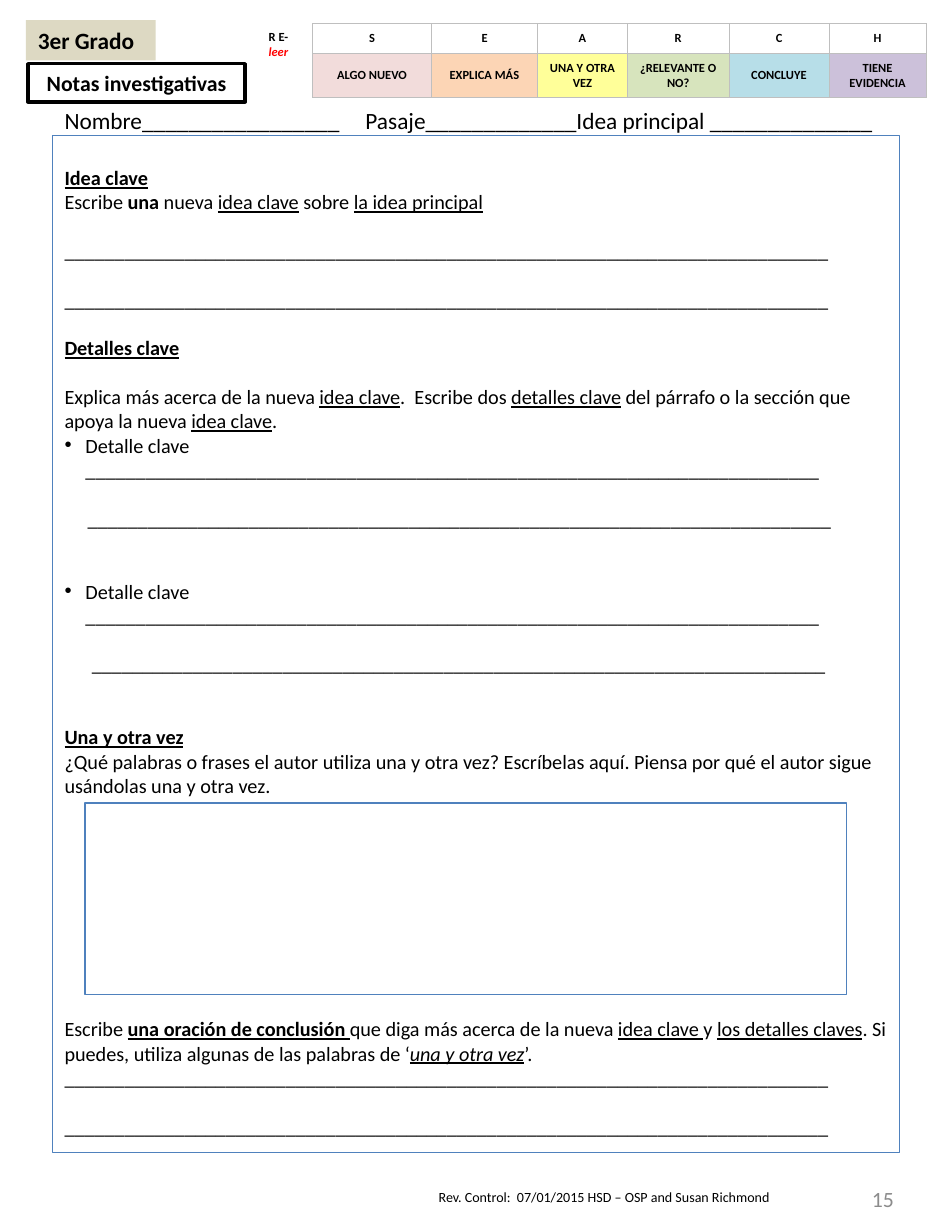
"""Build the third-grade investigative notes worksheet."""
from lxml.etree import SubElement
from pptx import Presentation
from pptx.dml.color import RGBColor
from pptx.enum.shapes import MSO_SHAPE
from pptx.enum.text import MSO_ANCHOR, PP_ALIGN
from pptx.oxml.ns import qn
from pptx.util import Pt

BLACK = RGBColor(0x00, 0x00, 0x00)
WHITE = RGBColor(0xFF, 0xFF, 0xFF)
RED = RGBColor(0xFF, 0x00, 0x00)
GRAY = RGBColor(0x8C, 0x8C, 0x8C)
BLUE = RGBColor(0x4F, 0x81, 0xBD)
TAN = RGBColor(0xDD, 0xD9, 0xC3)
PINK = RGBColor(0xF2, 0xDC, 0xDB)
ORANGE = RGBColor(0xFC, 0xD5, 0xB5)
YELLOW = RGBColor(0xFF, 0xFF, 0x99)
GREEN = RGBColor(0xD7, 0xE4, 0xBD)
AQUA = RGBColor(0xB7, 0xDE, 0xE8)
PURPLE = RGBColor(0xCC, 0xC1, 0xDA)
BORDER = RGBColor(0xBF, 0xBF, 0xBF)

STYLES = {"b": "bold", "i": "italic", "u": "underline"}
MARGINS = {"margin_left": Pt(7.7), "margin_right": Pt(7.7),
           "margin_top": Pt(3.6), "margin_bottom": Pt(3.6)}
LINE_HEIGHT = 15.65
INDENT = 13.5


def write_runs(paragraph, runs, size, color=BLACK, align=PP_ALIGN.LEFT):
    paragraph.alignment = align
    for text, styles in runs:
        run = paragraph.add_run()
        run.text = text
        font_format = {"name": "Calibri", "size": Pt(size)}
        font_format.update({STYLES[style]: True for style in styles})
        for name, value in font_format.items():
            setattr(run.font, name, value)
        run.font.color.rgb = color


def add_box(slide, position, fill=None, line=None, width=0.75, anchor=MSO_ANCHOR.TOP):
    shape = slide.shapes.add_shape(MSO_SHAPE.RECTANGLE, *map(Pt, position))
    shape.shadow.inherit = False
    if fill is None:
        shape.fill.background()
    else:
        shape.fill.solid()
        shape.fill.fore_color.rgb = fill
    if line is None:
        shape.line.fill.background()
    else:
        shape.line.color.rgb = line
        shape.line.width = Pt(width)
    frame_format = {**MARGINS, "word_wrap": True, "vertical_anchor": anchor}
    for name, value in frame_format.items():
        setattr(shape.text_frame, name, value)
    return shape


presentation = Presentation()
presentation.slide_width = Pt(612)
presentation.slide_height = Pt(792)
slide = presentation.slides.add_slide(presentation.slide_layouts[6])

footer = add_box(slide, (274.3, 760.3, 306, 18.7))
write_runs(footer.text_frame.paragraphs[0],
           [("Rev. Control:  07/01/2015 HSD – OSP and Susan Richmond", "")], 9)

long_rule = [("_" * 76, "")]
detail = [("Detalle clave " + "_" * 73, "")]
body = [
    (0, 0, [("Idea clave", "bu")]),
    (0, 0, [("Escribe ", ""), ("una", "b"), (" nueva ", ""), ("idea clave", "u"),
            (" sobre ", ""), ("la idea principal", "u")]),
    (1, 0, long_rule),
    (1, 0, long_rule),
    (1, 0, [("Detalles clave", "bu")]),
    (1, 0, [("Explica más acerca de la nueva ", ""), ("idea clave", "u"),
            (".  Escribe dos ", ""), ("detalles clave", "u"),
            (" del párrafo o la sección que apoya la nueva ", ""),
            ("idea clave", "u"), (".", "")]),
    (0, INDENT, detail),
    (1, 14.8, [("_" * 74, "")]),
    (2, INDENT, detail),
    (1, 17.6, [("_" * 73, "")]),
    (2, 0, [("Una y otra vez", "bu")]),
    (0, 0, [("¿Qué palabras o frases el autor utiliza una y otra vez? Escríbelas aquí. "
             "Piensa por qué el autor sigue usándolas una y otra vez.", "")]),
    (9, 0, [("Escribe ", ""), ("una oración de conclusión ", "bu"),
            ("que diga más acerca de la nueva ", ""), ("idea clave ", "u"), ("y ", ""),
            ("los detalles claves", "u"),
            (". Si puedes, utiliza algunas de las palabras de ‘", ""),
            ("una y otra vez", "iu"), ("’.", "")]),
    (0, 0, long_rule),
    (1, 0, long_rule),
]
notes = add_box(slide, (33.8, 87.1, 544.3, 653.8), WHITE, BLUE)
notes.text_frame.margin_top = Pt(3.6 + LINE_HEIGHT)
for index, (gap_lines, left_indent, runs) in enumerate(body):
    paragraph = notes.text_frame.add_paragraph() if index else notes.text_frame.paragraphs[0]
    paragraph.space_before = Pt(gap_lines * LINE_HEIGHT)
    write_runs(paragraph, runs, 13)
    properties = paragraph._p.get_or_add_pPr()
    properties.set("marL", str(Pt(left_indent)))
    if runs is detail:
        properties.set("indent", str(-Pt(left_indent)))
        SubElement(properties, qn("a:buFont"), typeface="Arial")
        SubElement(properties, qn("a:buChar"), char="•")

page_number = add_box(slide, (516.2, 749.5, 66.2, 42.5), anchor=MSO_ANCHOR.MIDDLE)
write_runs(page_number.text_frame.paragraphs[0], [("15", "")], 14, GRAY, PP_ALIGN.RIGHT)

grade = add_box(slide, (16.6, 13, 83.5, 25.9), TAN)
write_runs(grade.text_frame.paragraphs[0], [("3er Grado", "b")], 15)

add_box(slide, (54.7, 516.2, 489.6, 123.1), line=BLUE)

heading = add_box(slide, (33.8, 64.8, 544.3, 25.9))
paragraph = heading.text_frame.paragraphs[0]
write_runs(paragraph, [("Nombre" + "_" * 17 + "\tPasaje" + "_" * 13
                        + "Idea principal " + "_" * 14, "")], 15)
tab_list = SubElement(paragraph._p.get_or_add_pPr(), qn("a:tabLst"))
SubElement(tab_list, qn("a:tab"), pos=str(Pt(193.5)), algn="l")

search_columns = [
    ("S", "ALGO NUEVO", PINK, 76.3),
    ("E", "EXPLICA MÁS", ORANGE, 68.4),
    ("A", "UNA Y OTRA VEZ", YELLOW, 57.6),
    ("R", "¿RELEVANTE O NO?", GREEN, 65.5),
    ("C", "CONCLUYE", AQUA, 64.1),
    ("H", "TIENE EVIDENCIA", PURPLE, 62.6),
]
table = slide.shapes.add_table(2, 7, Pt(157), Pt(15.1), Pt(438.5), Pt(47.5)).table
for row, height in zip(table.rows, (19.4, 28.1)):
    row.height = Pt(height)
table.columns[0].width = Pt(44)
table.cell(0, 0).merge(table.cell(1, 0))
reread = table.cell(0, 0).text_frame
write_runs(reread.paragraphs[0], [("R E-", "b")], 8, BLACK, PP_ALIGN.CENTER)
write_runs(reread.add_paragraph(), [("leer", "bi")], 8, RED, PP_ALIGN.CENTER)
for column, (letter, label, color, width) in enumerate(search_columns, 1):
    table.columns[column].width = Pt(width)
    for row, (text, fill) in enumerate(((letter, WHITE), (label, color))):
        cell = table.cell(row, column)
        write_runs(cell.text_frame.paragraphs[0], [(text, "b")], 8, BLACK, PP_ALIGN.CENTER)
        cell.vertical_anchor = MSO_ANCHOR.MIDDLE
        cell.fill.solid()
        cell.fill.fore_color.rgb = fill
for row in range(2):
    for column in range(7):
        cell = table.cell(row, column)
        for name, value in MARGINS.items():
            setattr(cell, name, value)
        if column == 0:
            cell.fill.solid()
            cell.fill.fore_color.rgb = WHITE
        properties = cell._tc.get_or_add_tcPr()
        for order, side in enumerate(("lnL", "lnR", "lnT", "lnB")):
            edge = SubElement(properties, qn("a:" + side), w=str(Pt(0.5)))
            properties.insert(order, edge)
            if column == 0 and side != "lnR":
                SubElement(edge, qn("a:noFill"))
            else:
                solid = SubElement(edge, qn("a:solidFill"))
                SubElement(solid, qn("a:srgbClr"), val=str(BORDER))

title = add_box(slide, (18, 41, 139.7, 24.5), WHITE, BLACK, 2.25, MSO_ANCHOR.MIDDLE)
write_runs(title.text_frame.paragraphs[0], [("Notas investigativas", "b")], 14,
           align=PP_ALIGN.CENTER)

presentation.save("out.pptx")
